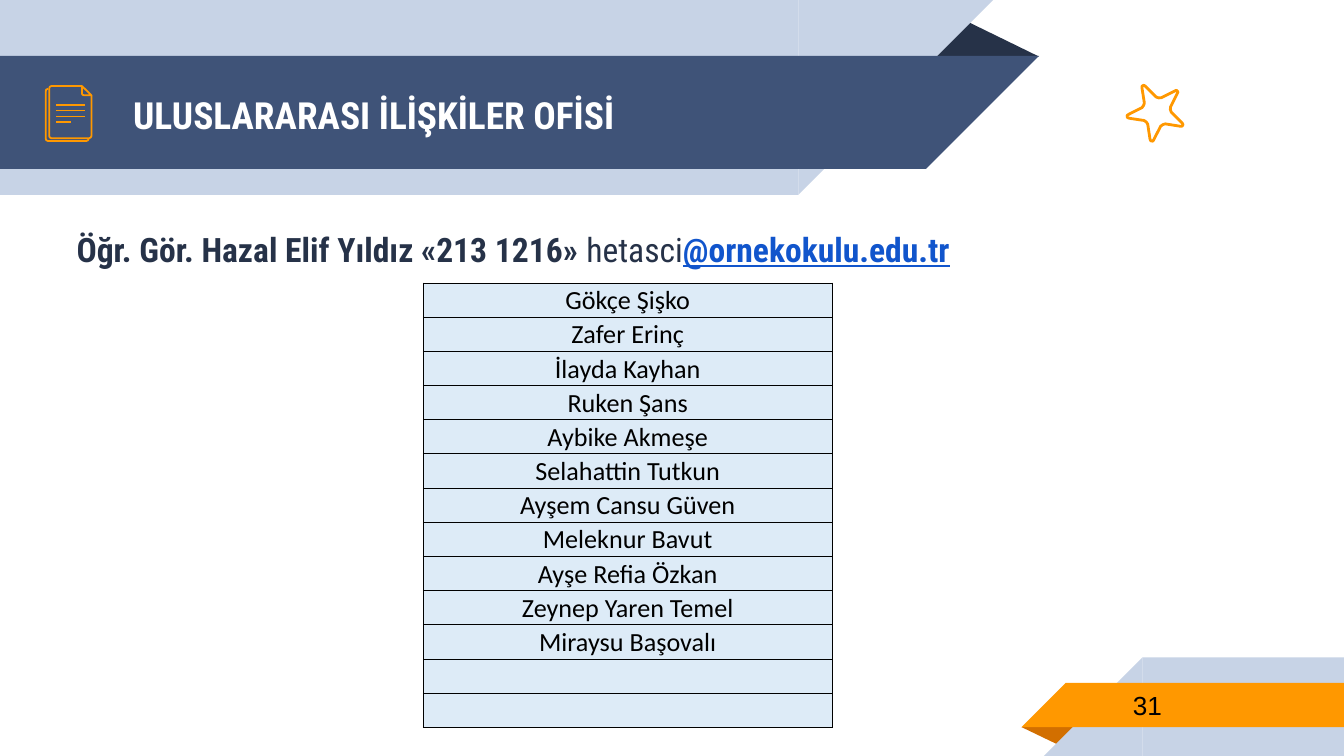
from dataclasses import dataclass
from math import cos, radians, sin

from lxml import etree
from pptx import Presentation
from pptx.dml.color import RGBColor
from pptx.enum.shapes import MSO_CONNECTOR, MSO_SHAPE
from pptx.enum.text import MSO_ANCHOR, MSO_AUTO_SIZE, PP_ALIGN
from pptx.oxml.ns import qn
from pptx.util import Pt

RECT = MSO_SHAPE.RECTANGLE
WEDGE = MSO_SHAPE.RIGHT_TRIANGLE
PEAK = MSO_SHAPE.ISOSCELES_TRIANGLE
LINE = MSO_CONNECTOR.STRAIGHT
TOP, MIDDLE = MSO_ANCHOR.TOP, MSO_ANCHOR.MIDDLE
LEFT, CENTER = PP_ALIGN.LEFT, PP_ALIGN.CENTER
FIXED = MSO_AUTO_SIZE.NONE


@dataclass(frozen=True)
class Theme:
    navy: str = "3F5378"
    dark: str = "263248"
    pale: str = "C7D3E6"
    gold: str = "FF9800"
    rust: str = "D26F00"
    link: str = "1155CC"
    cell: str = "DDEBF7"
    white: str = "FFFFFF"
    black: str = "000000"
    head: int = 20
    body: int = 18
    small: int = 14
    main: str = "Roboto Condensed"
    grid: str = "Calibri"
    page: str = "Arial"


THEME = Theme()
NAMES = [
    "Gökçe Şişko", "Zafer Erinç", "İlayda Kayhan", "Ruken Şans",
    "Aybike Akmeşe", "Selahattin Tutkun", "Ayşem Cansu Güven",
    "Meleknur Bavut", "Ayşe Refia Özkan", "Zeynep Yaren Temel",
    "Miraysu Başovalı", "", "",
]
BACK = [(47.5, 74.2), (47.2, 75.2), (46.2, 75.6), (25.8, 75.6), (24.8, 75.2),
        (24.5, 74.2), (24.5, 49), (24.8, 48), (25.8, 47.6)]
FRONT = [(49, 51.1), (49, 72.9), (48.6, 73.7), (47.7, 74.1), (27.6, 74.1),
         (26.7, 73.7), (26.4, 72.9), (26.4, 47.4), (26.7, 46.5), (27.6, 46.1),
         (43.9, 46.1)]
FOLD = [(43.9, 46.1), (49, 51.1), (45.1, 51.1), (44.2, 50.8), (43.9, 50)]


def color(code):
    return RGBColor.from_string(code)


def add_form(slide, kind, box, fill, turn=0):
    form = slide.shapes.add_shape(kind, *map(Pt, box))
    form.shadow.inherit = False
    form.fill.solid()
    form.fill.fore_color.rgb = color(fill)
    form.line.fill.background()
    form.rotation = turn
    return form


def add_peak(slide, box, fill, turn=0):
    add_form(slide, PEAK, box, fill, turn).adjustments[0] = 0.324


def add_band(slide, left, top, width, height, fill):
    add_form(slide, RECT, (left, top, width, height), fill)
    if left:
        add_form(slide, WEDGE, (left - height, top, height, height), fill, 270)
    else:
        add_form(slide, WEDGE, (width, top, height, height), fill, 90)


def add_path(slide, points, width, close):
    units = [(x * 10, y * 10) for x, y in points]
    pen = slide.shapes.build_freeform(*units[0], scale=Pt(1) / 10)
    pen.add_line_segments(units[1:], close=close)
    path = pen.convert_to_shape()
    path.shadow.inherit = False
    path.fill.background()
    path.line.color.rgb = color(THEME.gold)
    path.line.width = Pt(width)


def add_rule(slide, left, right, y):
    rule = slide.shapes.add_connector(LINE, Pt(left), Pt(y), Pt(right), Pt(y))
    rule.line.color.rgb = color(THEME.gold)
    rule.line.width = Pt(0.96)
    etree.SubElement(rule._element.spPr, qn("a:effectLst"))


def add_page_icon(slide):
    add_path(slide, BACK, 0.96, False)
    add_path(slide, FRONT, 0.96, False)
    for row, right in enumerate((45.4, 45.4, 45.4, 38.2)):
        add_rule(slide, 30.2, right, 56.1 + 3.15 * row)
    add_path(slide, FOLD, 0.96, True)


def add_star(slide, x, y):
    arm = [(14.9, -4), (15.8, -2), (15.8, 2), (14.9, 4),
           (8, 26), (7.6, 36), (8, 46)]
    points = []
    for tip in range(5):
        for size, turn in arm:
            angle = radians(72 * tip - 45 + turn)
            points.append((x + size * cos(angle), y + size * sin(angle)))
    add_path(slide, points, 1.5, True)


def add_run(para, text, size, font, fill, bold=False, under=None):
    run = para.add_run()
    run.text = text
    run.font.size = Pt(size)
    run.font.name = font
    run.font.color.rgb = color(fill)
    run.font.bold = bold
    run.font.underline = under


def set_frame(shape, box, anchor, top=7.2):
    shape.left, shape.top, shape.width, shape.height = map(Pt, box)
    frame = shape.text_frame
    frame.word_wrap = True
    frame.auto_size = FIXED
    frame.vertical_anchor = anchor
    frame.margin_left = frame.margin_right = frame.margin_bottom = Pt(7.2)
    frame.margin_top = Pt(top)
    para = frame.paragraphs[0]
    para.alignment = LEFT
    return para


def fill_body(shape):
    para = set_frame(shape, (33.8, 82.8, 660.2, 265.7), TOP, 40)
    para.space_before, para.space_after = Pt(0), Pt(10)
    props = para._p.get_or_add_pPr()
    props.set("marL", "0")
    props.set("indent", "0")
    etree.SubElement(props, qn("a:buNone"))
    size, font = THEME.body, THEME.main
    add_run(para, "Öğr. Gör. Hazal Elif Yıldız «213 1216» ", size, font, THEME.dark, True)
    add_run(para, "hetasci", size, font, THEME.dark)
    add_run(para, "@ornekokulu.edu.tr", size, font, THEME.link, True, True)


def set_edges(cell):
    props = cell._tc.get_or_add_tcPr()
    for side in ("lnL", "lnR", "lnT", "lnB"):
        edge = etree.SubElement(props, qn("a:" + side), w=str(Pt(0.5)))
        paint = etree.SubElement(edge, qn("a:solidFill"))
        etree.SubElement(paint, qn("a:srgbClr"), val=THEME.black)


def fill_cell(cell, text):
    cell.margin_left = cell.margin_right = cell.margin_top = Pt(0.72)
    cell.margin_bottom = Pt(0)
    cell.vertical_anchor = MIDDLE
    set_edges(cell)
    cell.fill.solid()
    cell.fill.fore_color.rgb = color(THEME.cell)
    para = cell.text_frame.paragraphs[0]
    para.alignment = CENTER
    if text:
        add_run(para, text, THEME.small, THEME.grid, THEME.black)
    else:
        etree.SubElement(para._p, qn("a:endParaRPr"), sz=str(THEME.small * 100))


def add_names(slide):
    box = (226.8, 151.6, 219, 238.3)
    table = slide.shapes.add_table(len(NAMES), 1, *map(Pt, box)).table
    table.first_row = table.horz_banding = False
    for row, name in enumerate(NAMES):
        table.rows[row].height = Pt(box[3] / len(NAMES))
        fill_cell(table.cell(row, 0), name)


def main():
    deck = Presentation()
    deck.slide_width, deck.slide_height = Pt(720), Pt(405)
    slide = deck.slides.add_slide(deck.slide_layouts[1])
    title, body = slide.placeholders

    add_peak(slide, (495.4, 10.1, 61.2, 20.2), THEME.dark)
    add_band(slide, 0, 0, 427.7, 104.4, THEME.pale)
    add_band(slide, 0, 30, 496.1, 60.5, THEME.navy)
    add_peak(slide, (547.2, 389.5, 31, 10.1), THEME.rust, 180)
    add_band(slide, 612, 352.2, 108, 52.8, THEME.pale)
    add_band(slide, 571, 365.8, 149, 23.8, THEME.gold)

    tree = slide.shapes._spTree
    for shape in (title, body):
        tree.append(shape._element)
    para = set_frame(title, (64.1, 31, 414, 60.5), MIDDLE)
    add_run(para, "ULUSLARARASI İLİŞKİLER OFİSİ", THEME.head, THEME.main, THEME.white, True)
    fill_body(body)

    box = (599.8, 365, 117.4, 25.2)
    para = set_frame(slide.shapes.add_textbox(*map(Pt, box)), box, MIDDLE)
    add_run(para, "31", THEME.small, THEME.page, THEME.black)
    add_page_icon(slide)
    add_star(slide, 619.5, 60)
    add_names(slide)
    deck.save("out.pptx")


if __name__ == "__main__":
    main()
